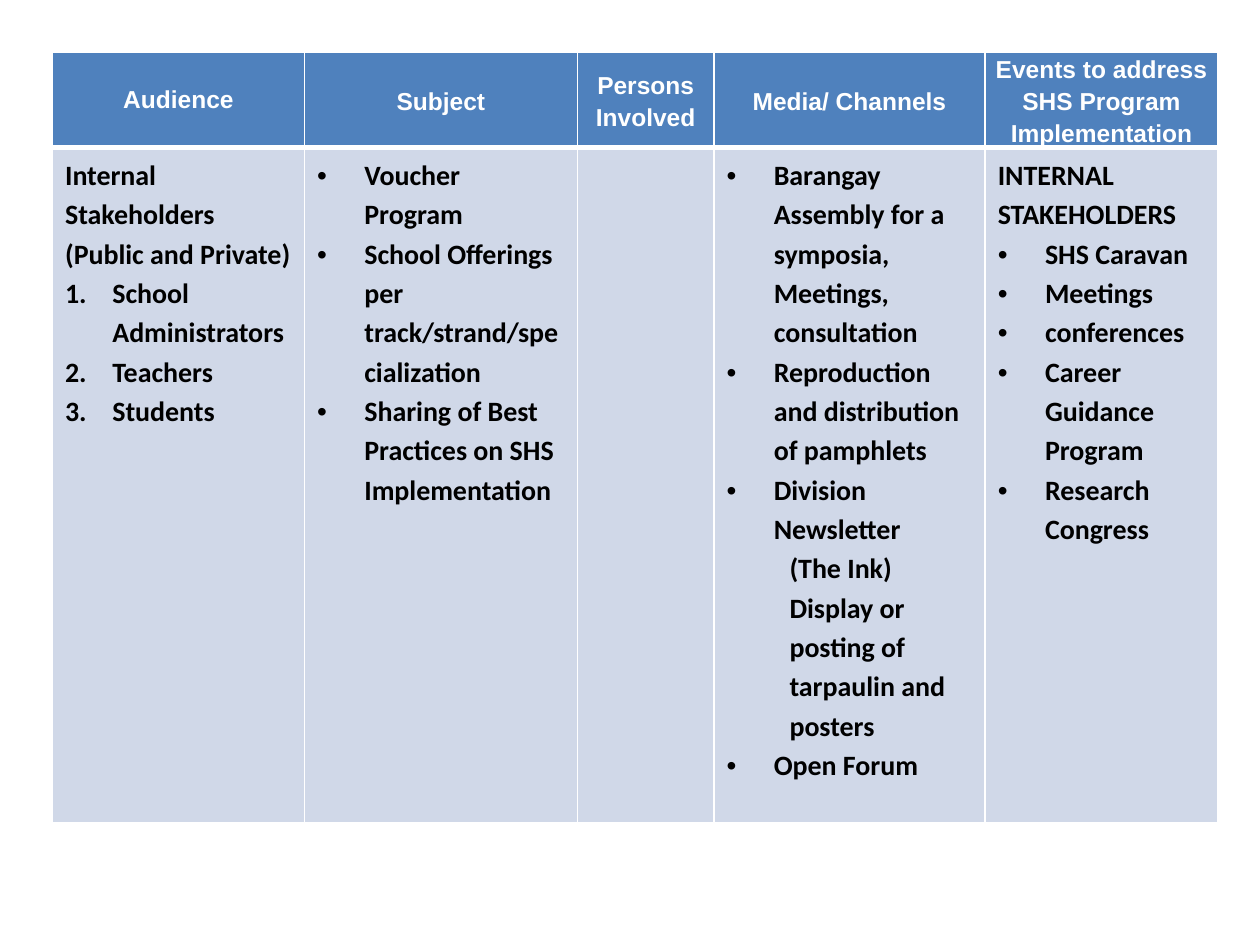
from lxml import etree
from pptx import Presentation
from pptx.dml.color import RGBColor
from pptx.enum.text import MSO_ANCHOR, PP_ALIGN
from pptx.oxml.ns import qn
from pptx.util import Pt

CENTER, MIDDLE = PP_ALIGN.CENTER, MSO_ANCHOR.MIDDLE

THEME = {
    "header_fill": "4F81BD", "header_text": "FFFFFF", "header_font": "Arial", "header_size": 14,
    "body_fill": "D0D8E8", "body_text": "000000", "body_font": "Calibri", "body_size": 16,
    "border": "FFFFFF", "line_spacing": 1.15,
}

# Content: (heading, column width, [(paragraph style, text)])
COLUMNS = [
    ("Audience", 144, [
        ("plain", "Internal Stakeholders"),
        ("plain", "(Public and Private)"),
        ("number", "School Administrators"),
        ("number", "Teachers"),
        ("number", "Students"),
    ]),
    ("Subject", 156, [
        ("bullet", "Voucher Program"),
        ("bullet", "School Offerings per track/strand/specialization"),
        ("bullet", "Sharing of Best Practices on SHS Implementation"),
    ]),
    ("Persons Involved", 78, []),
    ("Media/ Channels", 155, [
        ("bullet", "Barangay Assembly for a symposia, Meetings, consultation"),
        ("bullet", "Reproduction and distribution of pamphlets"),
        ("bullet", "Division Newsletter"),
        ("indent", "(The Ink)"),
        ("indent", "Display or posting of tarpaulin and posters"),
        ("bullet", "Open Forum"),
    ]),
    ("Events to address SHS Program Implementation", 133, [
        ("plain", "INTERNAL STAKEHOLDERS"),
        ("bullet", "SHS Caravan"),
        ("bullet", "Meetings"),
        ("bullet", "conferences"),
        ("bullet", "Career Guidance Program"),
        ("bullet", "Research Congress"),
    ]),
]

# Layout in points
LEFT, TOP = 30, 30
HEADER_HEIGHT, BODY_HEIGHT = 53.6, 386
MARGINS = {"plain": (0, 0), "indent": (36, 0), "bullet": (27, -27), "number": (27, -27)}
MARKERS = {
    "bullet": [("a:buFont", {"typeface": "Arial"}), ("a:buChar", {"char": "•"})],
    "number": [("a:buFont", {"typeface": "+mj-lt"}), ("a:buAutoNum", {"type": "arabicPeriod"})],
}


def set_borders(cell, top, bottom):
    properties = cell._tc.get_or_add_tcPr()
    widths = {"a:lnL": 1, "a:lnR": 1, "a:lnT": top, "a:lnB": bottom}
    for position, (side, width) in enumerate(widths.items()):
        line = etree.Element(qn(side), w=str(Pt(width)))
        fill = etree.SubElement(line, qn("a:solidFill"))
        etree.SubElement(fill, qn("a:srgbClr"), val=THEME["border"])
        properties.insert(position, line)


def style_paragraph(paragraph, part):
    font = paragraph.font
    font.name, font.size, font.bold = THEME[f"{part}_font"], Pt(THEME[f"{part}_size"]), True
    font.color.rgb = RGBColor.from_string(THEME[f"{part}_text"])


def set_marker(paragraph, style):
    margin, indent = MARGINS[style]
    properties = paragraph._p.get_or_add_pPr()
    properties.set("marL", str(Pt(margin)))
    properties.set("indent", str(Pt(indent)))
    run_defaults = properties.find(qn("a:defRPr"))
    for tag, attributes in MARKERS.get(style, [("a:buNone", {})]):
        run_defaults.addprevious(etree.Element(qn(tag), attributes))


def fill_cell(cell, part, top, bottom):
    cell.fill.solid()
    cell.fill.fore_color.rgb = RGBColor.from_string(THEME[f"{part}_fill"])
    set_borders(cell, top, bottom)


def write_header(cell, heading, is_first):
    fill_cell(cell, "header", 1, 3)
    cell.vertical_anchor = MIDDLE
    paragraph = cell.text_frame.paragraphs[0]
    paragraph.text, paragraph.alignment = heading, CENTER
    if not is_first:
        paragraph.line_spacing = THEME["line_spacing"]
        cell.margin_left = cell.margin_right = Pt(3.6)
        cell.margin_top = cell.margin_bottom = Pt(0)
    style_paragraph(paragraph, "header")


def write_body(cell, items):
    fill_cell(cell, "body", 3, 1)
    frame = cell.text_frame
    for index, (style, text) in enumerate(items):
        paragraph = frame.add_paragraph() if index else frame.paragraphs[0]
        paragraph.text = text
        paragraph.line_spacing = THEME["line_spacing"]
        style_paragraph(paragraph, "body")
        set_marker(paragraph, style)


def main():
    presentation = Presentation()
    presentation.slide_width, presentation.slide_height = Pt(720), Pt(540)
    slide = presentation.slides.add_slide(presentation.slide_layouts[6])

    # Communication plan table
    total_width = sum(width for _, width, _ in COLUMNS)
    table = slide.shapes.add_table(2, len(COLUMNS), Pt(LEFT), Pt(TOP), Pt(total_width),
                                   Pt(HEADER_HEIGHT + BODY_HEIGHT)).table
    table.rows[0].height, table.rows[1].height = Pt(HEADER_HEIGHT), Pt(BODY_HEIGHT)
    for index, (heading, width, items) in enumerate(COLUMNS):
        table.columns[index].width = Pt(width)
        write_header(table.cell(0, index), heading, index == 0)
        write_body(table.cell(1, index), items)

    presentation.save("out.pptx")


if __name__ == "__main__":
    main()
